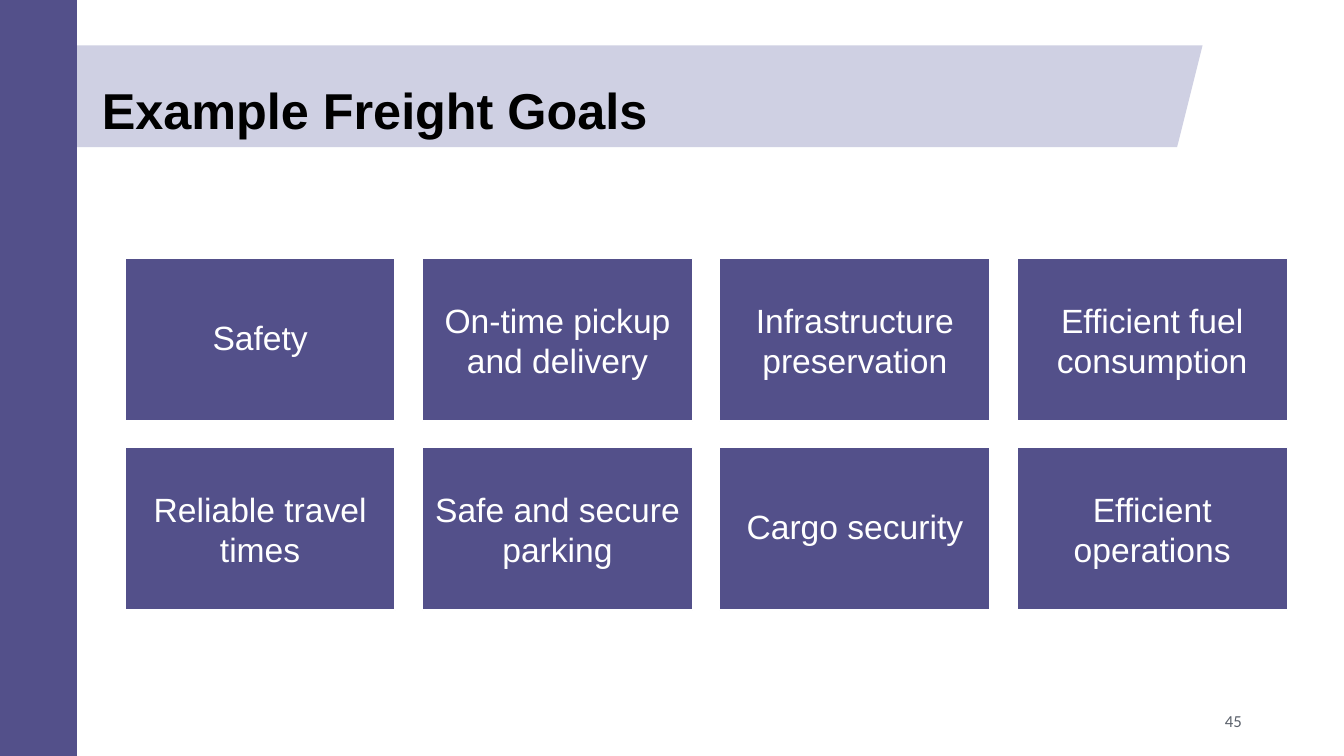
import dataclasses

import lxml.etree
import pptx
import pptx.dml.color
import pptx.enum.shapes
import pptx.enum.text
import pptx.shapes.autoshape
import pptx.slide
import pptx.text.text
import pptx.util

Align = pptx.enum.text.PP_ALIGN
Anchor = pptx.enum.text.MSO_ANCHOR
Preset = pptx.enum.shapes.MSO_SHAPE


@dataclasses.dataclass(frozen=True)
class Theme:
    purple: str = "53508A"
    lavender: str = "CFD0E3"
    white: str = "FFFFFF"
    black: str = "000000"
    gray: str = "5B616B"
    body_font: str = "Arial"
    number_font: str = "Calibri"
    title_size: float = 36
    goal_size: float = 24
    number_size: float = 12


@dataclasses.dataclass(frozen=True)
class Box:
    left: float
    top: float
    width: float
    height: float

    def lengths(self) -> list[pptx.util.Length]:
        return [pptx.util.Pt(value) for value in dataclasses.astuple(self)]


@dataclasses.dataclass(frozen=True)
class Goal:
    text: str
    line_spacing: float = 1.0


THEME = Theme()
COLUMNS = 4
FIRST_GOAL = Box(89.3, 184.8, 193, 116)
COLUMN_STEP = 212.4
ROW_STEP = 135
GOALS = [
    Goal("Safety", 0.9),
    Goal("On-time pickup and delivery"),
    Goal("Infrastructure preservation"),
    Goal("Efficient fuel consumption"),
    Goal("Reliable travel times"),
    Goal("Safe and secure parking"),
    Goal("Cargo security", 0.9),
    Goal("Efficient operations"),
]


def color(value: str) -> pptx.dml.color.RGBColor:
    return pptx.dml.color.RGBColor.from_string(value)


def write_text(
    frame: pptx.text.text.TextFrame,
    text: str,
    *,
    size: float,
    fill: str,
    font: str = THEME.body_font,
    bold: bool = False,
    align: Align = Align.LEFT,
    anchor: Anchor = Anchor.MIDDLE,
    line_spacing: float = 1.0,
    margins: tuple[float, float, float, float] = (7.2, 3.6, 7.2, 3.6),
) -> None:
    frame.word_wrap = True
    frame.auto_size = pptx.enum.text.MSO_AUTO_SIZE.NONE
    frame.vertical_anchor = anchor
    frame.margin_left, frame.margin_top, frame.margin_right, frame.margin_bottom = (
        pptx.util.Pt(margin) for margin in margins
    )
    paragraph = frame.paragraphs[0]
    paragraph.alignment = align
    paragraph.line_spacing = line_spacing
    run = paragraph.add_run()
    run.text = text
    run.font.name = font
    run.font.size = pptx.util.Pt(size)
    run.font.bold = bold
    run.font.color.rgb = color(fill)


def add_panel(
    slide: pptx.slide.Slide, preset: Preset, box: Box, fill: str
) -> pptx.shapes.autoshape.Shape:
    shape = slide.shapes.add_shape(preset, *box.lengths())
    shape.shadow.inherit = False
    shape.fill.solid()
    shape.fill.fore_color.rgb = color(fill)
    shape.line.fill.background()
    return shape


def add_title(slide: pptx.slide.Slide, text: str) -> None:
    title = slide.shapes.title
    title.left, title.top, title.width, title.height = Box(65.5, 55.4, 790, 39.6).lengths()
    write_text(
        title.text_frame,
        text,
        size=THEME.title_size,
        fill=THEME.black,
        bold=True,
        anchor=Anchor.TOP,
        line_spacing=0.9,
        margins=(7.2, 5.8, 7.2, 0),
    )
    title.element.getparent().append(title.element)


def add_goal(slide: pptx.slide.Slide, index: int, goal: Goal) -> None:
    row, column = divmod(index, COLUMNS)
    box = dataclasses.replace(
        FIRST_GOAL,
        left=FIRST_GOAL.left + column * COLUMN_STEP,
        top=FIRST_GOAL.top + row * ROW_STEP,
    )
    tile = add_panel(slide, Preset.RECTANGLE, box, THEME.purple)
    tile.line.color.rgb = color(THEME.white)
    tile.line.width = pptx.util.Pt(1)
    write_text(
        tile.text_frame,
        goal.text,
        size=THEME.goal_size,
        fill=THEME.white,
        align=Align.CENTER,
        line_spacing=goal.line_spacing,
        margins=(7.2, 7.2, 7.2, 7.2),
    )


def main() -> None:
    presentation = pptx.Presentation()
    presentation.slide_width = pptx.util.Pt(960)
    presentation.slide_height = pptx.util.Pt(540)
    slide = presentation.slides.add_slide(presentation.slide_layouts.get_by_name("Title Only"))

    band = add_panel(slide, Preset.PARALLELOGRAM, Box(17.3, 32.4, 841.7, 72.7), THEME.lavender)
    band.adjustments[0] = 0.25
    add_panel(slide, Preset.RECTANGLE, Box(0, 0, 54.9, 540), THEME.purple)
    add_title(slide, "Example Freight Goals")

    for index, goal in enumerate(GOALS):
        add_goal(slide, index, goal)

    number = slide.shapes.add_textbox(*Box(678.2, 500.4, 216, 28.8).lengths())
    write_text(
        number.text_frame,
        "45",
        size=THEME.number_size,
        fill=THEME.gray,
        font=THEME.number_font,
        align=Align.RIGHT,
    )
    presentation.save("out.pptx")


if __name__ == "__main__":
    main()
